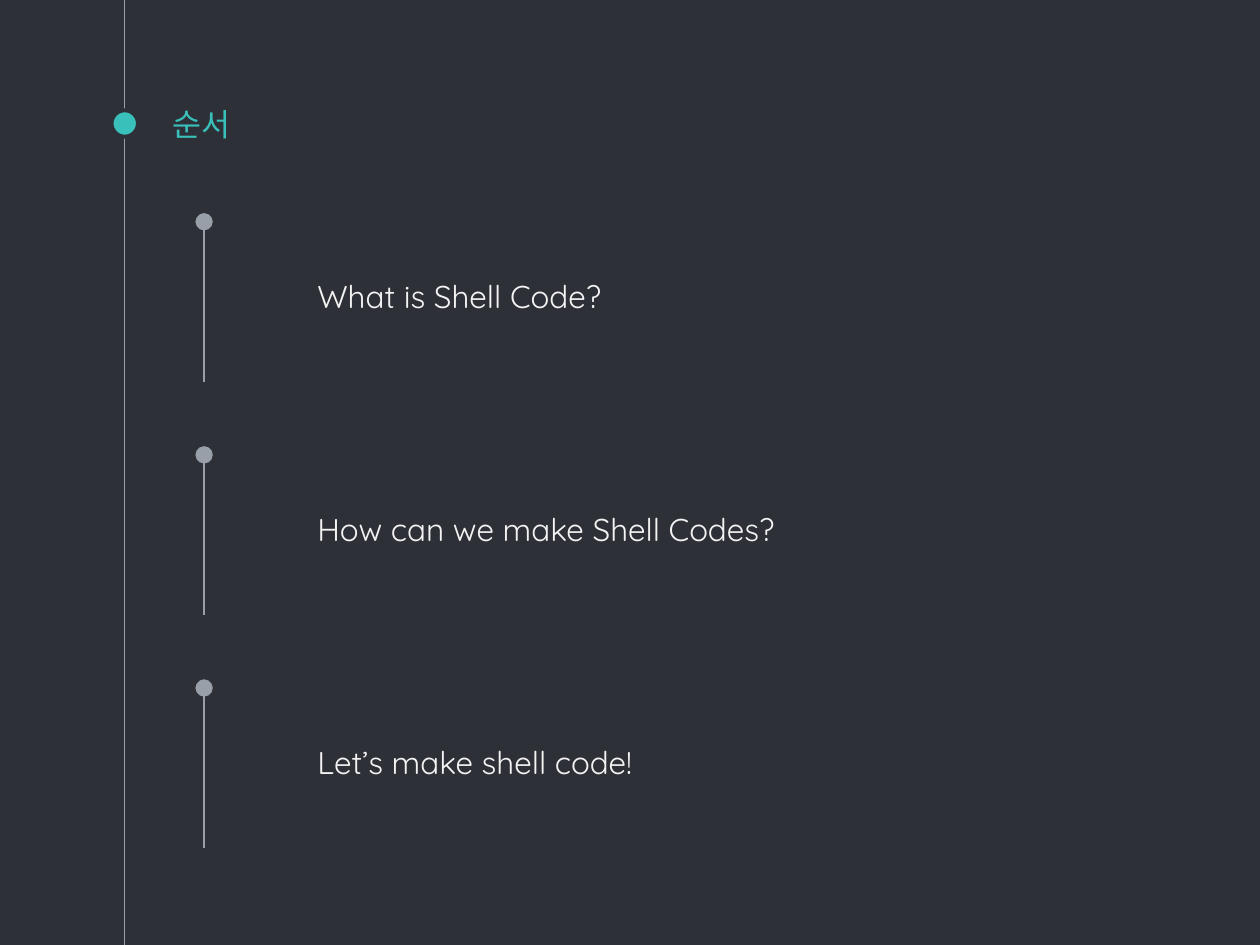
from lxml.etree import SubElement
from pptx import Presentation
from pptx.dml.color import RGBColor
from pptx.enum.shapes import MSO_CONNECTOR, MSO_SHAPE
from pptx.enum.text import MSO_ANCHOR, MSO_AUTO_SIZE, PP_ALIGN
from pptx.oxml.ns import qn
from pptx.util import Inches, Pt

TITLE = "순서"
TOPICS = [
    "What is Shell Code?",
    "How can we make Shell Codes?",
    "Let’s make shell code!",
]

BACKGROUND, ACCENT, GREY, WHITE = "2E3037", "39C0BA", "999FA9", "F3F3F3"
TITLE_FONT, BODY_FONT = "Noto Sans CJK KR", "Quicksand"

WIDTH, HEIGHT = 10, 7.5
RAIL_X, TITLE_Y, DOT = 0.99, 0.98, 0.21
MARK_X, MARK_TOP, MARK_LENGTH, STEP = 1.62, 1.76, 1.27, 1.85
TEXT_X, TEXT_WIDTH, TEXT_HEIGHT = 2.42, 6, 0.42


def rgb(color):
    return RGBColor.from_string(color)


def add_line(slide, x, y1, y2, dot_end=False):
    """Draw a vertical grey line, with an optional dot at y2."""
    line = slide.shapes.add_connector(
        MSO_CONNECTOR.STRAIGHT, Inches(x), Inches(y1), Inches(x), Inches(y2))
    line.line.color.rgb = rgb(GREY)
    line.line.width = Pt(0.75)
    if dot_end:
        SubElement(line.line._get_or_add_ln(), qn("a:tailEnd"),
                   type="oval", w="lg", len="lg")
    SubElement(line._element.spPr, qn("a:effectLst"))


def write(sp, text, font, color, anchor):
    tf = sp.text_frame
    frame_format = {"word_wrap": True, "auto_size": MSO_AUTO_SIZE.NONE,
                    "vertical_anchor": anchor}
    for side in ("left", "right", "top", "bottom"):
        frame_format[f"margin_{side}"] = Inches(0.1)
    for name, value in frame_format.items():
        setattr(tf, name, value)
    p = tf.paragraphs[0]
    p.alignment = PP_ALIGN.LEFT
    r = p.add_run()
    r.text = text
    for name, value in {"name": font, "size": Pt(18)}.items():
        setattr(r.font, name, value)
    r.font.color.rgb = rgb(color)
    SubElement(r.font._element, qn("a:ea"), typeface=font)


def main():
    prs = Presentation()
    prs.slide_width, prs.slide_height = Inches(WIDTH), Inches(HEIGHT)
    s = prs.slides.add_slide(prs.slide_layouts[5])
    s.background.fill.solid()
    s.background.fill.fore_color.rgb = rgb(BACKGROUND)

    add_line(s, RAIL_X, 0, HEIGHT)
    dot = s.shapes.add_shape(
        MSO_SHAPE.OVAL, Inches(RAIL_X - DOT / 2), Inches(TITLE_Y - DOT / 2),
        Inches(DOT), Inches(DOT))
    dot.shadow.inherit = False
    dot.fill.solid()
    dot.fill.fore_color.rgb = rgb(ACCENT)
    dot.line.color.rgb = rgb(BACKGROUND)
    dot.line.width = Pt(2.25)

    title = s.shapes.title
    title.left, title.top = Inches(1.27), Inches(TITLE_Y - 0.25)
    title.width, title.height = Inches(7.5), Inches(0.5)
    write(title, TITLE, TITLE_FONT, ACCENT, MSO_ANCHOR.BOTTOM)

    for i, topic in enumerate(TOPICS):
        top = MARK_TOP + i * STEP
        add_line(s, MARK_X, top + MARK_LENGTH, top, dot_end=True)
        box = s.shapes.add_textbox(
            Inches(TEXT_X), Inches(top + 0.34),
            Inches(TEXT_WIDTH), Inches(TEXT_HEIGHT))
        write(box, topic, BODY_FONT, WHITE, MSO_ANCHOR.TOP)

    prs.save("out.pptx")


if __name__ == "__main__":
    main()
